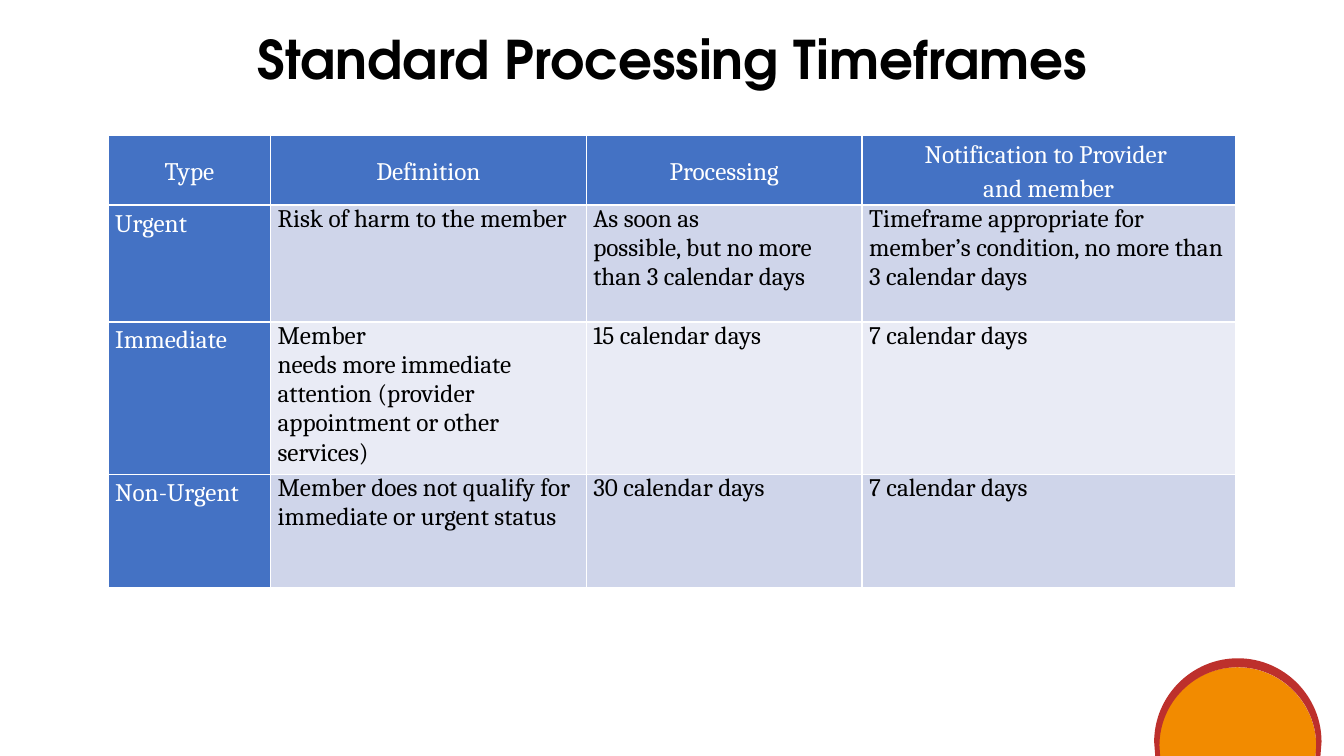
from copy import deepcopy

from pptx import Presentation
from pptx.dml.color import RGBColor
from pptx.enum.text import MSO_ANCHOR, PP_ALIGN
from pptx.oxml import parse_xml
from pptx.oxml.ns import nsdecls
from pptx.util import Pt

SLIDE_WIDTH, SLIDE_HEIGHT = 960, 540
BLUE, WHITE, BLACK = "4472C4", "FFFFFF", "000000"
BANDS = ("CFD5EA", "E9EBF5")
COLUMN_WIDTHS = (116, 225.5, 197, 266.5)
ROW_HEIGHTS = (47.5, 83.5, 108.7, 81.4)

# Each cell is a list of paragraphs; \v breaks a line inside a paragraph
TIMEFRAMES = [
    [["Type"], ["Definition"], ["Processing"],
     ["Notification to Provider \vand member"]],
    [["Urgent"], ["Risk of harm to the member"],
     ["As soon as", "possible, but no more than 3 calendar days"],
     ["Timeframe appropriate for member’s condition, no more than 3 calendar days"]],
    [["Immediate"],
     ["Member", "needs more immediate attention (provider appointment or other services)"],
     ["15 calendar days"], ["7 calendar days"]],
    [["Non-Urgent"], ["Member does not qualify for immediate or urgent status"],
     ["30 calendar days"], ["7 calendar days"]],
]


def color(hex_value):
    return RGBColor.from_string(hex_value)


def set_attributes(target, values):
    for name, value in values.items():
        setattr(target, name, value)


def write_paragraphs(frame, texts, font, layout):
    frame.text = "\n".join(texts)
    for paragraph in frame.paragraphs:
        set_attributes(paragraph, layout)
        for run in paragraph.runs:
            set_attributes(run.font, {k: v for k, v in font.items() if k != "color"})
            run.font.color.rgb = color(font["color"])
        # A line break takes the format of the text before it
        for line_break in paragraph._p.xpath("a:br"):
            line_break.append(deepcopy(paragraph.runs[0]._r.rPr))


def add_title(slide, text):
    title = slide.shapes.add_textbox(Pt(11.8), Pt(20.2), Pt(936.7), Pt(49.7))
    title.text_frame.word_wrap = True
    font = {"name": "TeX Gyre Adventor", "size": Pt(38), "bold": True, "color": BLACK}
    write_paragraphs(title.text_frame, [text], font,
                     {"alignment": PP_ALIGN.CENTER, "line_spacing": 0.9})


def arch(center_x, top, radius, foot_inset):
    """Steps of a half circle from left to right, with feet on the slide edge."""
    left, right, middle = center_x - radius, center_x + radius, top + radius
    pull = 0.45 * radius
    return [
        [(left + foot_inset, SLIDE_HEIGHT)],
        [(left, middle)],
        [(left, top + pull), (left + pull, top), (center_x, top)],
        [(right - pull, top), (right, top + pull), (right, middle)],
        [(right - foot_inset, SLIDE_HEIGHT)],
    ]


def reverse_steps(steps):
    """The same outline walked from its end to its start."""
    points = [point for step in steps for point in step][::-1]
    reversed_steps = [[points.pop(0)]]
    for step in steps[:0:-1]:
        reversed_steps.append([points.pop(0) for _ in step])
    return reversed_steps


def add_curved_outline(slide, steps, fill):
    """One point in a step is a line, three points are a curve."""
    points = [point for step in steps for point in step]
    left, right = min(x for x, _ in points), max(x for x, _ in points)
    top, bottom = min(y for _, y in points), max(y for _, y in points)
    builder = slide.shapes.build_freeform(Pt(left), Pt(top))
    builder.add_line_segments([(Pt(right), Pt(top)), (Pt(right), Pt(bottom)),
                               (Pt(left), Pt(bottom))], close=True)
    outline = builder.convert_to_shape()
    route = outline._element.xpath(".//a:path")[0]
    for child in list(route):
        route.remove(child)
    for index, step in enumerate(steps):
        tag = "moveTo" if index == 0 else "lnTo" if len(step) == 1 else "cubicBezTo"
        stops = "".join(f'<a:pt x="{Pt(x - left)}" y="{Pt(y - top)}"/>' for x, y in step)
        route.append(parse_xml(f'<a:{tag} {nsdecls("a")}>{stops}</a:{tag}>'))
    route.append(parse_xml(f'<a:close {nsdecls("a")}/>'))
    outline.shadow.inherit = False
    outline.fill.solid()
    outline.fill.fore_color.rgb = color(fill)
    outline.line.fill.background()


def add_borders(cell):
    properties = cell._tc.get_or_add_tcPr()
    for side in ("lnL", "lnR", "lnT", "lnB"):
        properties.append(parse_xml(
            f'<a:{side} {nsdecls("a")} w="{Pt(1)}"><a:solidFill>'
            f'<a:srgbClr val="{WHITE}"/></a:solidFill></a:{side}>'))


def format_cell(cell, texts, row, column):
    is_header, is_label = row == 0, row == 0 or column == 0
    font = {"name": "Cambria", "size": Pt(18), "bold": False,
            "color": WHITE if is_label else BLACK}
    layout = {"alignment": PP_ALIGN.CENTER if is_header else PP_ALIGN.LEFT,
              "line_spacing": 1.15 if is_label else 1.0}
    write_paragraphs(cell.text_frame, texts, font, layout)
    set_attributes(cell, {
        "margin_left": Pt(5), "margin_right": Pt(5),
        "margin_top": 0, "margin_bottom": 0,
        "vertical_anchor": MSO_ANCHOR.MIDDLE if is_header else MSO_ANCHOR.TOP,
    })
    add_borders(cell)
    cell.fill.solid()
    cell.fill.fore_color.rgb = color(BLUE if is_label else BANDS[(row - 1) % 2])


def add_timeframe_table(slide):
    table = slide.shapes.add_table(
        len(ROW_HEIGHTS), len(COLUMN_WIDTHS), Pt(77.3), Pt(96.8),
        Pt(sum(COLUMN_WIDTHS)), Pt(sum(ROW_HEIGHTS))).table
    for column, width in zip(table.columns, COLUMN_WIDTHS):
        column.width = Pt(width)
    for row, height in zip(table.rows, ROW_HEIGHTS):
        row.height = Pt(height)
    for r, cells in enumerate(TIMEFRAMES):
        for c, texts in enumerate(cells):
            format_cell(table.cell(r, c), texts, r, c)


def main():
    presentation = Presentation()
    set_attributes(presentation, {"slide_width": Pt(SLIDE_WIDTH),
                                  "slide_height": Pt(SLIDE_HEIGHT)})
    slide = presentation.slides.add_slide(presentation.slide_layouts[6])

    # Corner ornament: orange dome with a red rim
    dome = arch(883.8, 476.6, 56.4, 0.5)
    rim = arch(884.2, 470.2, 59.8, 0.8) + reverse_steps(arch(884.2, 476.6, 56, 0.5))
    add_curved_outline(slide, dome, "F28B00")
    add_curved_outline(slide, rim, "BD302C")

    # Heading and table
    add_title(slide, "Standard Processing Timeframes")
    add_timeframe_table(slide)

    presentation.save("out.pptx")


if __name__ == "__main__":
    main()
